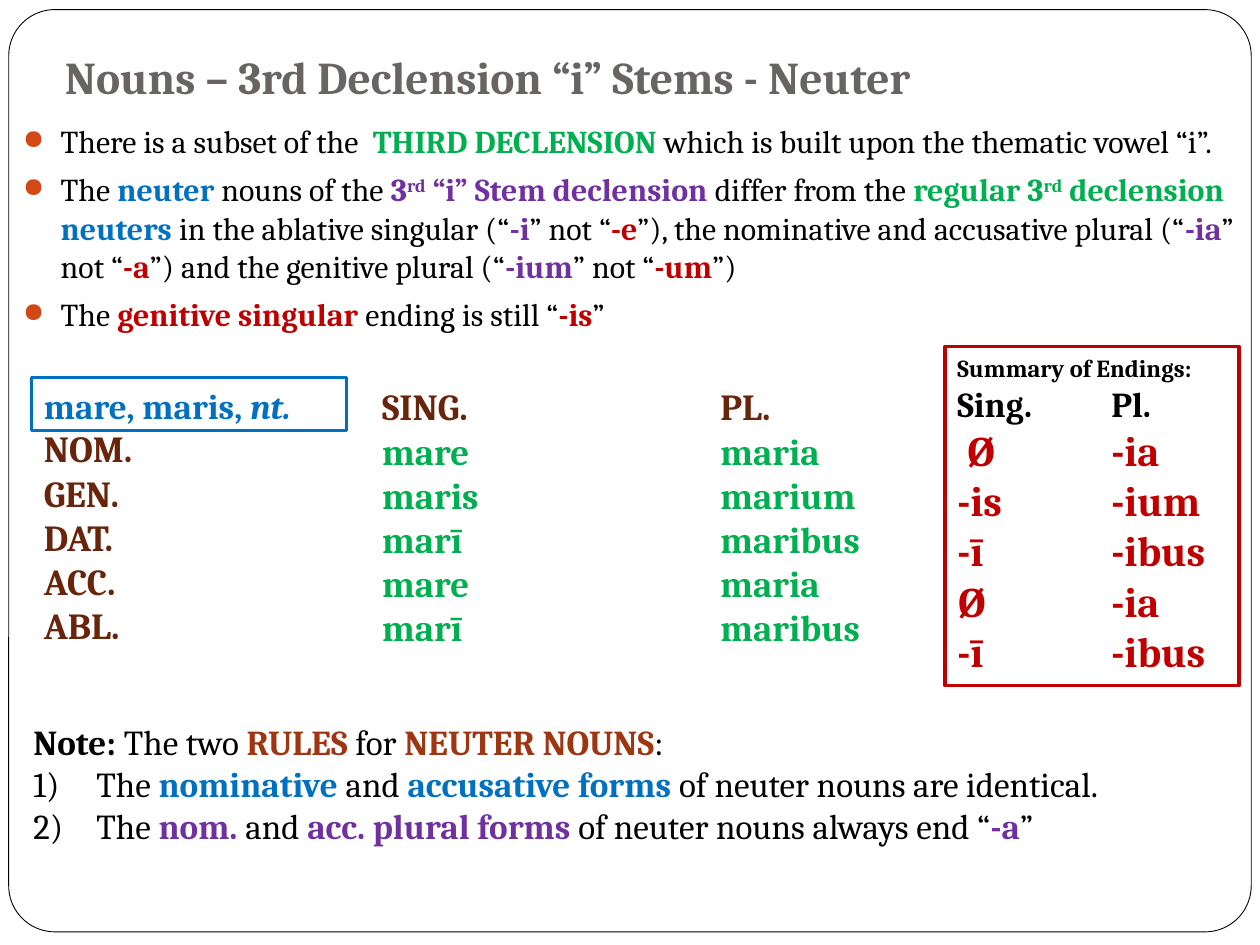
"""Build a slide on the neuter i-stem nouns of the Latin third declension."""
from lxml.etree import SubElement
from pptx import Presentation
from pptx.dml.color import RGBColor
from pptx.enum.shapes import MSO_SHAPE
from pptx.enum.text import MSO_ANCHOR
from pptx.oxml.ns import qn
from pptx.util import Pt

BLACK = RGBColor(0x00, 0x00, 0x00)
WHITE = RGBColor(0xFF, 0xFF, 0xFF)
GREY = RGBColor(0x69, 0x64, 0x64)
BLUE = RGBColor(0x00, 0x70, 0xC0)
GREEN = RGBColor(0x00, 0xB0, 0x50)
PURPLE = RGBColor(0x70, 0x30, 0xA0)
RED = RGBColor(0xC0, 0x00, 0x00)
BROWN = RGBColor(0x69, 0x24, 0x0C)
RUST = RGBColor(0x9E, 0x36, 0x11)


def add_text(shapes, box, paras, size, **fmt):
    sp = shapes.add_textbox(*map(Pt, box))
    tf = sp.text_frame
    for key, value in {"word_wrap": True, **fmt}.items():
        setattr(tf, key, value)
    for i, runs in enumerate(paras):
        p = tf.paragraphs[0] if i == 0 else tf.add_paragraph()
        for text, color, *extra in runs:
            r = p.add_run()
            r.text = text
            look = {"name": "Cambria", "size": Pt(size), "bold": color is not None}
            for key, value in {**look, **(extra[0] if extra else {})}.items():
                setattr(r.font, key, value)
            r.font.color.rgb = color or BLACK
    return tf


def add_frame(shapes, kind, box, color, width):
    sp = shapes.add_shape(kind, *map(Pt, box))
    sp.shadow.inherit = False
    sp.fill.background()
    sp.line.color.rgb = color
    sp.line.width = Pt(width)
    return sp


prs = Presentation()
prs.slide_width, prs.slide_height = Pt(720), Pt(540)
s = prs.slides.add_slide(prs.slide_layouts[6])

page = add_frame(s.shapes, MSO_SHAPE.ROUNDED_RECTANGLE, (5, 5.5, 710, 527), BLACK, 0.5)
page.adjustments[0] = 0.05
page.fill.solid()
page.fill.fore_color.rgb = WHITE

cases = ["NOM.", "GEN.", "DAT.", "ACC.", "ABL."]
forms = {
    "SING.": ["mare", "maris", "marī", "mare", "marī"],
    "PL.": ["maria", "marium", "maribus", "maria", "maribus"],
}
small = {"size": Pt(20)}
paras = [[("mare, maris, ", BLUE, small), ("nt.", BLUE, {**small, "italic": True})]]
paras += [[(case, BROWN)] for case in cases]
for number, words in forms.items():
    paras += [[(number, BROWN)]] + [[(word, GREEN)] for word in words]
tf = add_text(s.shapes, (18, 216, 594, 162), paras, 21)
tf._txBody.bodyPr.set("numCol", "3")
add_frame(s.shapes, MSO_SHAPE.RECTANGLE, (18, 216, 180, 30), BLUE, 1.75)

rules = [
    [("Note: ", BLACK), ("The two ", None), ("RULES ", RUST), ("for ", None),
     ("NEUTER NOUNS", RUST), (":", None)],
    [("The ", None), ("nominative ", BLUE), ("and ", None), ("accusative forms ", BLUE),
     ("of neuter nouns are identical.", None)],
    [("The ", None), ("nom. ", PURPLE), ("and ", None), ("acc. plural forms ", PURPLE),
     ("of neuter nouns always end “", None), ("-a", PURPLE), ("”", None)],
]
tf = add_text(s.shapes, (12, 408, 696, 80), rules, 20)
for p in tf.paragraphs[1:]:
    pPr = p._p.get_or_add_pPr()
    pPr.set("marL", str(Pt(36)))
    pPr.set("indent", str(Pt(-36)))
    SubElement(pPr, qn("a:buFont"), typeface="+mj-lt")
    SubElement(pPr, qn("a:buAutoNum"), type="arabicParenR")

endings = [(" Ø", "-ia"), ("-is", "-ium"), ("-ī", "-ibus"), ("Ø", "-ia"), ("-ī", "-ibus")]
summary = [[("Summary of Endings:", BLACK, {"size": Pt(14)})],
           [("Sing.\tPl.", BLACK, {"size": Pt(20)})]]
summary += [[("\t".join(pair), RED)] for pair in endings]
grp = s.shapes.add_group_shape()
tf = add_text(grp.shapes, (540, 198, 180, 194), summary, 24)
for p in tf.paragraphs[1:]:
    tabs = SubElement(p._p.get_or_add_pPr(), qn("a:tabLst"))
    SubElement(tabs, qn("a:tab"), pos=str(Pt(88)), algn="l")
add_frame(grp.shapes, MSO_SHAPE.RECTANGLE, (540, 198, 168, 194), RED, 1.75)

title = [[("Nouns – 3rd Declension “i” Stems - Neuter", GREY)]]
add_text(s.shapes, (30, 21.5, 678, 45), title, 26,
         vertical_anchor=MSO_ANCHOR.BOTTOM, margin_bottom=Pt(7.2))

raised = "30000"
points = [
    [("There is a subset of the  ", None), ("THIRD DECLENSION ", GREEN),
     ("which is built upon the thematic vowel “i”.", None)],
    [("The ", None), ("neuter ", BLUE), ("nouns of the ", None), ("3", PURPLE),
     ("rd", PURPLE), (" “i” Stem declension ", PURPLE), ("differ from the ", None),
     ("regular 3", GREEN), ("rd", GREEN), (" declension ", GREEN), ("neuters", BLUE),
     (" in the ablative singular (“", None), ("-i", PURPLE), ("” not “", None), ("-e", RED),
     ("”), the nominative and accusative plural (“", None), ("-ia", PURPLE),
     ("” not “", None), ("-a", RED), ("”) and the genitive plural (“", None),
     ("-ium", PURPLE), ("” not “", None), ("-um", RED), ("”)", None)],
    [("The ", None), ("genitive singular ", RED), ("ending is still “", None),
     ("-is", RED), ("”", None)],
]
tf = add_text(s.shapes, (6, 66, 708, 138), points, 18.2)
for p in tf.paragraphs:
    p.space_before = Pt(5.8)
    pPr = p._p.get_or_add_pPr()
    pPr.set("marL", str(Pt(21.6)))
    pPr.set("indent", str(Pt(-21.6)))
    SubElement(SubElement(pPr, qn("a:buClr")), qn("a:srgbClr"), val="D34817")
    SubElement(pPr, qn("a:buSzPct"), val="85000")
    SubElement(pPr, qn("a:buChar"), char="●")
    for r in p.runs:
        if r.text == "rd":
            r.font._element.set("baseline", raised)

prs.save("out.pptx")
